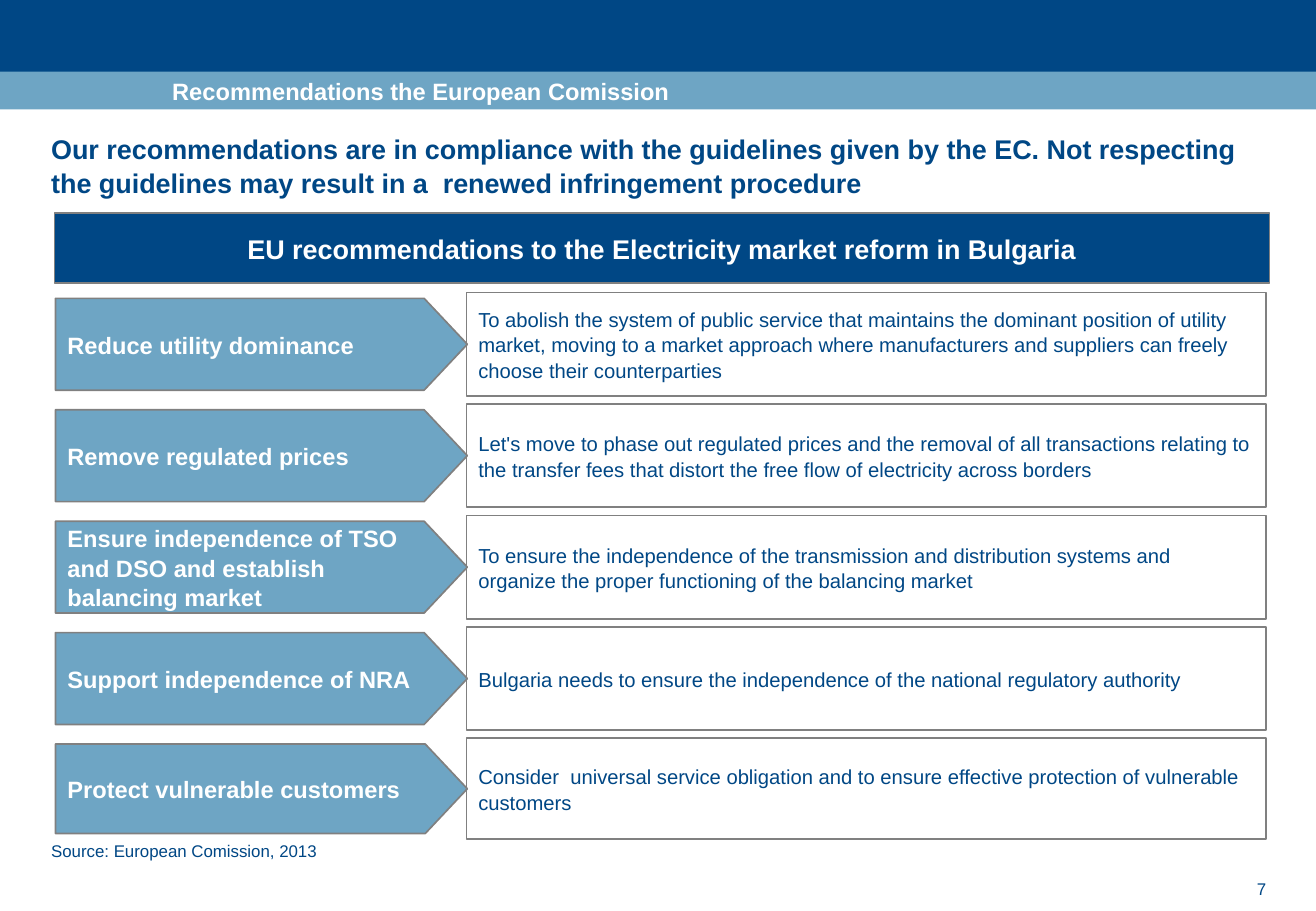
import dataclasses

import pptx
import pptx.dml.color
import pptx.enum.shapes
import pptx.enum.text
import pptx.util

Cm = pptx.util.Cm
Align = pptx.enum.text.PP_ALIGN
Anchor = pptx.enum.text.MSO_ANCHOR
Shape = pptx.enum.shapes.MSO_SHAPE

COLORS = {"navy": "004785", "sky": "6EA5C4", "grey": "808080", "white": "FFFFFF"}
FONT = "Arial"
ROW_TOP = 6.12
ROW_PITCH = 2.33
ARROW_INSET = 0.12
PADDING = (0.25, 0.25, 0.25, 0.25)


@dataclasses.dataclass
class Row:
    label: str
    detail: str
    height: float = 2.16


ROWS = [
    Row("Reduce utility dominance",
        "To abolish the system of public service that maintains the dominant position of utility "
        "market, moving to a market approach where manufacturers and suppliers can freely "
        "choose their counterparties"),
    Row("Remove regulated prices",
        "Let's move to phase out regulated prices and the removal of all transactions relating "
        "to the transfer fees that distort the free flow of electricity across borders"),
    Row("Ensure independence of TSO and DSO and establish balancing market",
        "To ensure the independence of the transmission and distribution systems and organize "
        "the proper functioning of the balancing market"),
    Row("Support independence of NRA",
        "Bulgaria needs to ensure the independence of the national regulatory authority"),
    Row("Protect vulnerable customers",
        "Consider  universal service obligation and to ensure effective protection of "
        "vulnerable customers", 2.11),
]


def rgb(name: str) -> pptx.dml.color.RGBColor:
    return pptx.dml.color.RGBColor.from_string(COLORS[name])


def write(s, text: str, *, size: float, color: str = "navy", bold: bool = False,
          align=Align.LEFT, anchor=Anchor.MIDDLE, insets=(0, 0, 0, 0),
          spacing: float = 1.05) -> None:
    tf = s.text_frame
    tf.word_wrap = True
    tf.auto_size = pptx.enum.text.MSO_AUTO_SIZE.NONE
    tf.vertical_anchor = anchor
    tf.margin_left, tf.margin_top, tf.margin_right, tf.margin_bottom = map(Cm, insets)
    p = tf.paragraphs[0]
    p.alignment = align
    p.line_spacing = spacing
    p.space_before = pptx.util.Pt(0)
    r = p.add_run()
    r.text = text
    r.font.name = FONT
    r.font.size = pptx.util.Pt(size)
    r.font.bold = bold
    r.font.color.rgb = rgb(color)


def add_box(slide, kind, left: float, top: float, width: float, height: float,
            fill: str | None = None, line: str | None = None):
    s = slide.shapes.add_shape(kind, Cm(left), Cm(top), Cm(width), Cm(height))
    s.shadow.inherit = False
    if fill:
        s.fill.solid()
        s.fill.fore_color.rgb = rgb(fill)
    else:
        s.fill.background()
    if line:
        s.line.color.rgb = rgb(line)
        s.line.width = pptx.util.Pt(1)
    else:
        s.line.fill.background()
    return s


def add_text(slide, text: str, left: float, top: float, width: float, height: float,
             **fmt) -> None:
    s = slide.shapes.add_textbox(Cm(left), Cm(top), Cm(width), Cm(height))
    write(s, text, **fmt)


def add_row(slide, row: Row, top: float) -> None:
    detail = add_box(slide, Shape.RECTANGLE, 9.75, top, 16.71, row.height, line="grey")
    write(detail, row.detail, size=12, insets=PADDING)
    arrow = add_box(slide, Shape.PENTAGON, 1.16, top + ARROW_INSET, 8.61,
                    row.height - 2 * ARROW_INSET, "sky", "grey")
    arrow.adjustments[0] = 0.47
    write(arrow, row.label, size=14, color="white", bold=True, insets=PADDING)


def main() -> None:
    prs = pptx.Presentation()
    prs.slide_width, prs.slide_height = Cm(27.51), Cm(19.05)
    slide = prs.slides.add_slide(prs.slide_layouts[5])

    title = slide.shapes.title
    title.left, title.top, title.width, title.height = map(Cm, (1.07, 2.74, 25.4, 1.37))
    write(title, "Our recommendations are in compliance with the guidelines given by the EC. "
          "Not respecting the guidelines may result in a  renewed infringement procedure",
          size=16, bold=True, anchor=Anchor.TOP)

    add_box(slide, Shape.RECTANGLE, 0, 0, 27.51, 1.57, "navy")
    band = add_box(slide, Shape.RECTANGLE, 0, 1.5, 27.51, 0.79, "sky")
    write(band, "Recommendations the European Comission", size=14, color="white",
          bold=True, insets=(3.6, 0, 0, 0))

    banner = add_box(slide, Shape.RECTANGLE, 1.14, 4.45, 25.4, 1.47, "navy", "grey")
    write(banner, "EU recommendations to the Electricity market reform in Bulgaria",
          size=16, color="white", bold=True, align=Align.CENTER)

    for i, row in enumerate(ROWS):
        add_row(slide, row, ROW_TOP + i * ROW_PITCH)

    add_text(slide, "Source: European Comission, 2013", 1.07, 17.58, 25.4, 0.43,
             size=10, anchor=Anchor.TOP, spacing=1)
    add_text(slide, "7", 25.53, 18.14, 0.94, 0.66,
             size=10, align=Align.RIGHT, anchor=Anchor.BOTTOM, spacing=1)
    prs.save("out.pptx")


if __name__ == "__main__":
    main()
